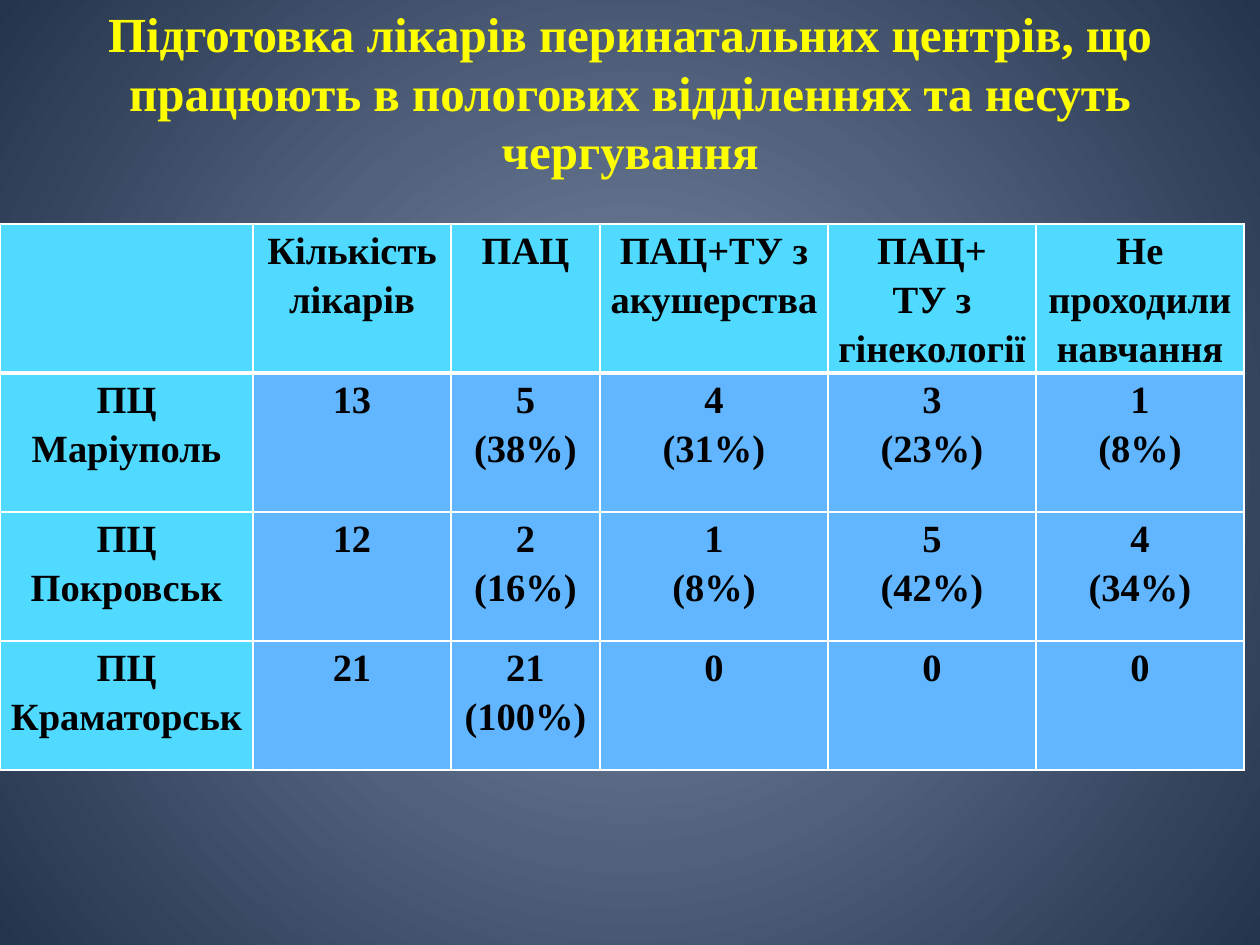
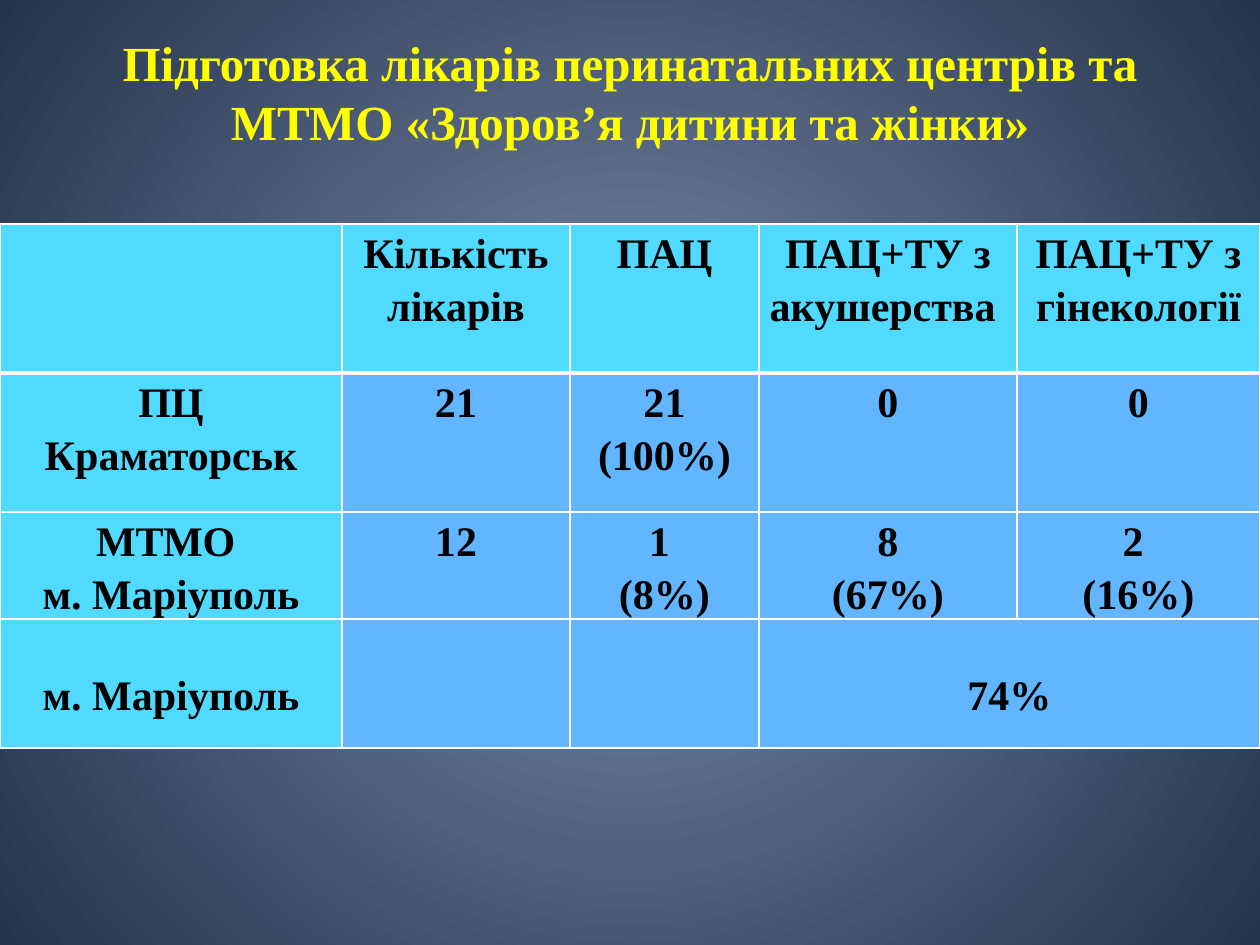
"""Build two slides on the training of doctors in perinatal centres."""
from dataclasses import dataclass

from lxml import etree
from pptx import Presentation
from pptx import util as u
from pptx.dml.color import RGBColor
from pptx.enum import text
from pptx.oxml.ns import qn

PX_PER_INCH = 126


@dataclass(frozen=True)
class Theme:
    """Colours, font and sizes shared by the slides."""
    font: str = "Times New Roman"
    centre: str = "7D8DAA"
    edge: str = "24344C"
    title: str = "FFFF00"
    ink: str = "000000"
    label_fill: str = "51DAFF"
    value_fill: str = "61B6FF"
    border: str = "FFFFFF"
    title_pt: int = 28
    thin_pt: int = 1
    thick_pt: int = 3
    line_spacing: float = 1.15


THEME = Theme()
TITLE_BOX = (63, 38, 1134, 107)
TABLE_TOP = 224
CELL_SIDE = 9
SUMMARY_TOP = 47

DUTY_TITLE = ("Підготовка лікарів перинатальних центрів, що працюють "
              "в пологових відділеннях та несуть чергування")
DUTY_ROWS = [
    ["", "Кількість лікарів", "ПАЦ", "ПАЦ+ТУ з акушерства ",
     "ПАЦ+\nТУ з гінекології", "Не проходили навчання"],
    ["ПЦ Маріуполь", "13", "5\n(38%)", "4\n(31%)", "3\n(23%)", "1\n(8%)"],
    ["ПЦ Покровськ", "12", "2\n(16%)", "1\n(8%)", "5\n(42%)", "4\n(34%)"],
    ["ПЦ Краматорськ", "21", "21\n(100%)", "0", "0", "0"],
]
UNION_TITLE = ("Підготовка лікарів перинатальних центрів та "
               "МТМО «Здоров’я дитини та жінки»")
UNION_ROWS = [
    ["", "Кількість лікарів", "ПАЦ", "ПАЦ+ТУ з акушерства ",
     "ПАЦ+ТУ з гінекології"],
    ["ПЦ Краматорськ", "21", "21\n(100%)", "0", "0"],
    ["МТМО \nм. Маріуполь", "12", "1 \n(8%)", "8\n(67%)", "2 \n(16%)"],
    ["м. Маріуполь", "", "", "74%", ""],
]


def px(length):
    """Convert px to EMU."""
    return u.Inches(length / PX_PER_INCH)


def rgb(colour):
    """Return a colour object for a hex string."""
    return RGBColor.from_string(colour)


def paint_background(master):
    """Give the master a radial gradient that all slides inherit."""
    fill = master.background.fill
    fill.gradient()
    for stop, colour, position in zip(fill.gradient_stops,
                                      (THEME.centre, THEME.edge), (0, 1)):
        stop.color.rgb = rgb(colour)
        stop.position = position
    gradient = master.element.find(f".//{qn('p:bg')}//{qn('a:gradFill')}")
    gradient.remove(gradient.find(qn("a:lin")))
    circle = etree.SubElement(gradient, qn("a:path"), {"path": "circle"})
    etree.SubElement(circle, qn("a:fillToRect"), dict.fromkeys("ltrb", "50000"))


def add_run(paragraph, words, size, colour):
    """Add one bold, centred run to a paragraph."""
    paragraph.alignment = text.PP_ALIGN.CENTER
    run = paragraph.add_run()
    run.text = words
    run.font.name = THEME.font
    run.font.size = u.Pt(size)
    run.font.bold = True
    run.font.color.rgb = rgb(colour)


def add_titled_slide(deck, heading):
    """Add a slide with a formatted title."""
    slide = deck.slides.add_slide(deck.slide_layouts.get_by_name("Title Only"))
    title = slide.shapes.title
    title.left, title.top, title.width, title.height = map(px, TITLE_BOX)
    frame = title.text_frame
    frame.word_wrap = True
    frame.auto_size = text.MSO_AUTO_SIZE.NONE
    frame.vertical_anchor = text.MSO_ANCHOR.MIDDLE
    add_run(frame.paragraphs[0], heading, THEME.title_pt, THEME.title)
    return slide


def draw_borders(cell, row):
    """Draw thin cell borders with a thick line below the header."""
    widths = {"L": THEME.thin_pt, "R": THEME.thin_pt,
              "T": THEME.thick_pt if row == 1 else THEME.thin_pt,
              "B": THEME.thick_pt if row == 0 else THEME.thin_pt}
    properties = cell._tc.get_or_add_tcPr()
    for side, width in widths.items():
        line = etree.SubElement(properties, qn(f"a:ln{side}"),
                                {"w": str(u.Pt(width))})
        solid = etree.SubElement(line, qn("a:solidFill"))
        etree.SubElement(solid, qn("a:srgbClr"), {"val": THEME.border})


def fill_cell(cell, words, row, column, size):
    """Write and format one table cell."""
    cell.margin_left = cell.margin_right = px(CELL_SIDE)
    cell.margin_top = cell.margin_bottom = 0
    draw_borders(cell, row)
    is_label = row == 0 or column == 0
    cell.fill.solid()
    cell.fill.fore_color.rgb = rgb(THEME.label_fill if is_label
                                   else THEME.value_fill)
    frame = cell.text_frame
    for index, part in enumerate(words.split("\n") if words else []):
        paragraph = frame.add_paragraph() if index else frame.paragraphs[0]
        paragraph.line_spacing = THEME.line_spacing
        add_run(paragraph, part, size, THEME.ink)


def add_training_table(slide, rows, widths, heights, size):
    """Add a table of doctors by centre and kind of training."""
    table = slide.shapes.add_table(len(rows), len(widths), 0, px(TABLE_TOP),
                                   px(sum(widths)), px(sum(heights))).table
    for column, width in zip(table.columns, widths):
        column.width = px(width)
    for line, height in zip(table.rows, heights):
        line.height = px(height)
    for row, entries in enumerate(rows):
        for column, words in enumerate(entries):
            fill_cell(table.cell(row, column), words, row, column, size)
    return table


def main():
    """Build and save the deck."""
    deck = Presentation()
    deck.slide_width, deck.slide_height = px(1260), px(945)
    paint_background(deck.slide_master)

    duty = add_titled_slide(deck, DUTY_TITLE)
    add_training_table(duty, DUTY_ROWS, (253, 198, 149, 228, 208, 208),
                       (149, 139, 129, 129), 22)

    union = add_titled_slide(deck, UNION_TITLE)
    training = add_training_table(union, UNION_ROWS, (342, 228, 189, 258, 243),
                                  (149, 139, 102, 129), 24)
    city, share = training.cell(3, 0), training.cell(3, 3)
    share.merge(training.cell(3, 4))
    for summary in (city, share):
        summary.margin_top = px(SUMMARY_TOP)

    deck.save("out.pptx")


if __name__ == "__main__":
    main()
